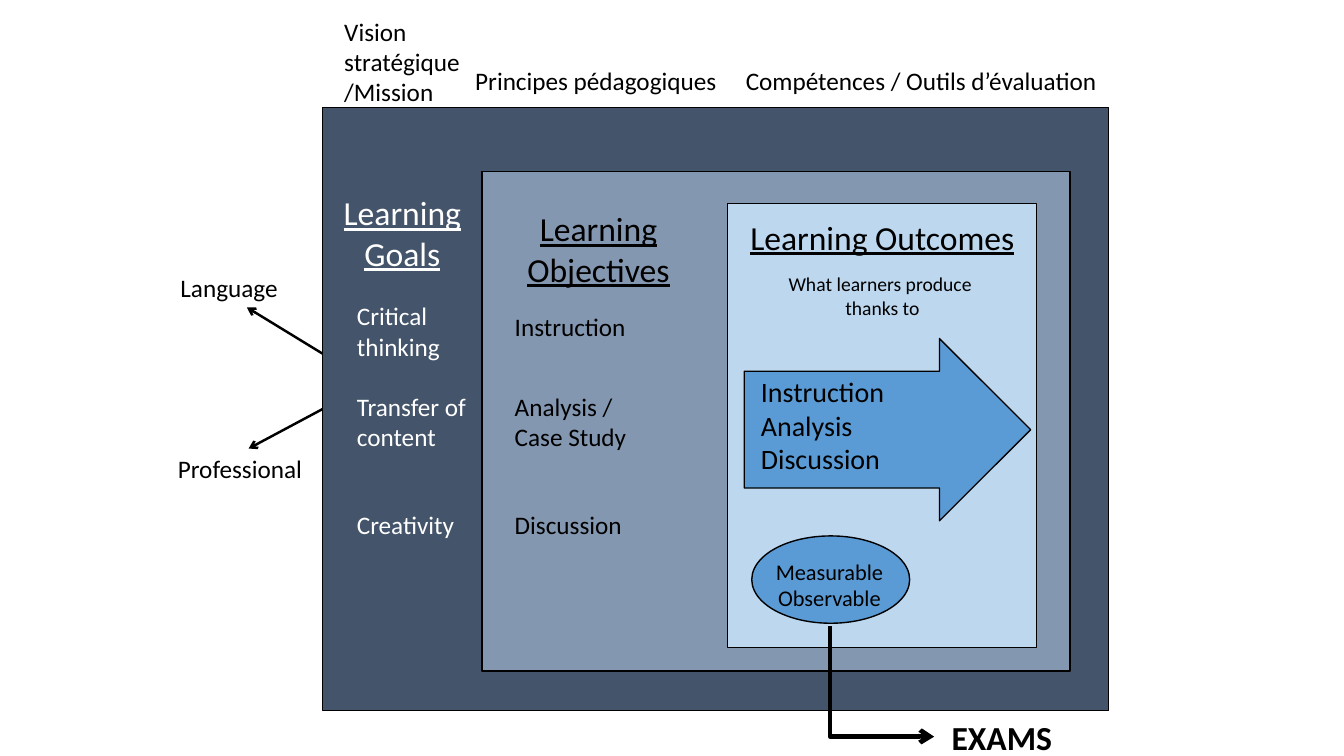
from dataclasses import dataclass

from lxml import etree
from pptx import Presentation
from pptx.dml.color import RGBColor
from pptx.enum.shapes import MSO_CONNECTOR, MSO_SHAPE
from pptx.enum.text import MSO_AUTO_SIZE, PP_ALIGN
from pptx.oxml.ns import qn
from pptx.util import Inches, Pt

RECTANGLE = MSO_SHAPE.RECTANGLE
RIGHT_ARROW = MSO_SHAPE.RIGHT_ARROW
OVAL = MSO_SHAPE.OVAL
STRAIGHT = MSO_CONNECTOR.STRAIGHT
ELBOW = MSO_CONNECTOR.ELBOW
LEFT = PP_ALIGN.LEFT
CENTER = PP_ALIGN.CENTER
GROW = MSO_AUTO_SIZE.SHAPE_TO_FIT_TEXT

SLIDE_WIDTH, SLIDE_HEIGHT = Inches(13.33), Inches(7.5)
COLUMNS, ROWS = 160, 90
LEFT_SIDE = 1


@dataclass(frozen=True)
class Theme:
    font: str = "Calibri"
    ink: str = "000000"
    light: str = "FFFFFF"
    goals: str = "44546A"
    objectives: str = "8497B0"
    outcomes: str = "BDD7EE"
    accent: str = "5B9BD5"
    heading: int = 24
    steps: int = 20
    body: int = 18
    badge: int = 16
    note: int = 14
    outline: float = 1
    arrow: float = 1.75
    exam_arrow: float = 3.25


THEME = Theme()


@dataclass(frozen=True)
class Box:
    left: float
    top: float
    width: float
    height: float

    def inner(self, left, top, width, height):
        return Box(self.left + left, self.top + top, width, height)

    def lengths(self):
        return (column(self.left), row(self.top), column(self.width), row(self.height))


def column(count):
    return round(SLIDE_WIDTH * count / COLUMNS)


def row(count):
    return round(SLIDE_HEIGHT * count / ROWS)


def add_figure(slide, kind, box, fill):
    shape = slide.shapes.add_shape(kind, *box.lengths())
    shape.shadow.inherit = False
    shape.fill.solid()
    shape.fill.fore_color.rgb = RGBColor.from_string(fill)
    shape.line.color.rgb = RGBColor.from_string(THEME.ink)
    shape.line.width = Pt(THEME.outline)
    return shape


def add_text(slide, box, lines, size=THEME.body, color=THEME.ink, align=LEFT,
             underline=None, bold=None):
    frame = slide.shapes.add_textbox(*box.lengths()).text_frame
    frame.word_wrap = True
    frame.auto_size = GROW
    for index, line in enumerate(lines):
        paragraph = frame.add_paragraph() if index else frame.paragraphs[0]
        paragraph.alignment = align
        run = paragraph.add_run()
        run.text = line
        run.font.name = THEME.font
        run.font.size = Pt(size)
        run.font.color.rgb = RGBColor.from_string(color)
        run.font.underline = underline
        run.font.bold = bold


def add_heading(slide, box, text, color=THEME.ink):
    add_text(slide, box, [text], THEME.heading, color, CENTER, underline=True)


def add_arrow(slide, kind, start, end, width):
    connector = slide.shapes.add_connector(
        kind, column(start[0]), row(start[1]), column(end[0]), row(end[1]))
    connector.line.color.rgb = RGBColor.from_string(THEME.ink)
    connector.line.width = Pt(width)
    properties = connector._element.spPr
    etree.SubElement(properties.find(qn("a:ln")), qn("a:tailEnd"), type="arrow")
    etree.SubElement(properties, qn("a:effectLst"))
    return connector


def add_down_right_arrow(slide, start, end, width):
    center_x, center_y = (start[0] + end[0]) / 2, (start[1] + end[1]) / 2
    half_width, half_height = (end[0] - start[0]) / 2, (end[1] - start[1]) / 2
    connector = add_arrow(slide, ELBOW,
                          (center_x - half_height, center_y - half_width),
                          (center_x + half_height, center_y + half_width), width)
    properties = connector._element.spPr
    transform = properties.find(qn("a:xfrm"))
    transform.set("rot", "16200000")
    transform.set("flipH", "1")
    geometry = properties.find(qn("a:prstGeom"))
    adjustments = geometry.find(qn("a:avLst"))
    if adjustments is None:
        adjustments = etree.SubElement(geometry, qn("a:avLst"))
    etree.SubElement(adjustments, qn("a:gd"), name="adj1", fmla="val 99700")


def draw_goals(slide, box):
    panel = add_figure(slide, RECTANGLE, box, THEME.goals)
    add_heading(slide, box.inner(1, 9.5, 17, 10.9), "Learning Goals", THEME.light)
    for top, width, height, goal in (
            (22.4, 14.2, 8.5, "Critical thinking"),
            (33.2, 15.4, 8.5, "Transfer of content"),
            (47.3, 14.2, 4.8, "Creativity")):
        add_text(slide, box.inner(2.9, top, width, height), [goal], color=THEME.light)
    return panel


def draw_objectives(slide, box):
    add_figure(slide, RECTANGLE, box, THEME.objectives)
    add_heading(slide, box.inner(0.9, 3.8, 25.9, 10.9), "Learning Objectives")
    for top, height, lines in (
            (16.1, 4.8, ["Instruction"]),
            (25.6, 8.5, ["Analysis /", "Case Study"]),
            (39.7, 4.8, ["Discussion"])):
        add_text(slide, box.inner(2.7, top, 24.6, height), lines)


def draw_outcomes(slide, box):
    add_figure(slide, RECTANGLE, box, THEME.outcomes)
    arrow = add_figure(slide, RIGHT_ARROW, box.inner(2, 16.1, 34.1, 21.7), THEME.accent)
    arrow.adjustments[0] = 0.64
    arrow.adjustments[1] = 0.5
    add_heading(slide, box.inner(1, 1, 34.9, 6.1), "Learning Outcomes")
    add_text(slide, box.inner(1, 7.6, 34.9, 6.8),
             ["What learners produce ", "thanks to"], THEME.note, align=CENTER)
    add_text(slide, box.inner(2.8, 19.8, 21.7, 13.3),
             ["Instruction", "Analysis", "Discussion"], THEME.steps)
    add_figure(slide, OVAL, box.inner(2.9, 39.6, 18.8, 10.4), THEME.accent)
    add_text(slide, box.inner(3.5, 41.6, 17.3, 7.7),
             ["Measurable", "Observable"], THEME.badge, align=CENTER)


def draw_exams(slide, box):
    add_down_right_arrow(slide, (box.left, box.top),
                         (box.left + 12.4, box.top + 13.2), THEME.exam_arrow)
    add_text(slide, box.inner(13.3, 10.2, 20.8, 6.1), ["EXAMS"], THEME.heading, bold=True)


def draw_skills(slide, box, goals_panel):
    right = box.left + box.width
    add_text(slide, box.inner(0.3, 0, 18.1, 4.8), ["Language"])
    add_text(slide, box.inner(0, 21.6, 19.3, 4.8), ["Professional"])
    add_arrow(slide, STRAIGHT, (right, box.top + 10.3),
              (box.left + 9.4, box.top + 4.8), THEME.arrow)
    professional = add_arrow(slide, STRAIGHT, (right, box.top + 16.9),
                             (box.left + 9.6, box.top + 21.6), THEME.arrow)
    professional.begin_connect(goals_panel, LEFT_SIDE)


def draw_captions(slide, box):
    for left, top, width, height, caption in (
            (0, 0, 17, 12.1, "Vision stratégique/Mission"),
            (15.6, 5.9, 31.2, 4.8, "Principes pédagogiques"),
            (47.8, 5.9, 47.3, 4.8, "Compétences / Outils d’évaluation")):
        add_text(slide, box.inner(left, top, width, height), [caption])


def main():
    presentation = Presentation()
    presentation.slide_width, presentation.slide_height = SLIDE_WIDTH, SLIDE_HEIGHT
    slide = presentation.slides.add_slide(presentation.slide_layouts[6])
    goals = Box(38.4, 12.8, 93.6, 71.8)
    objectives = goals.inner(19, 7.6, 70, 59.5)
    outcomes = objectives.inner(29.2, 3.8, 36.8, 52.9)
    goals_panel = draw_goals(slide, goals)
    draw_objectives(slide, objectives)
    draw_outcomes(slide, outcomes)
    draw_exams(slide, outcomes.inner(12.2, 50.3, 34.1, 16.3))
    draw_skills(slide, Box(20, 31.8, 18.4, 26.4), goals_panel)
    draw_captions(slide, Box(39.8, 1.3, 95.1, 12.1))
    presentation.save("out.pptx")


if __name__ == "__main__":
    main()
